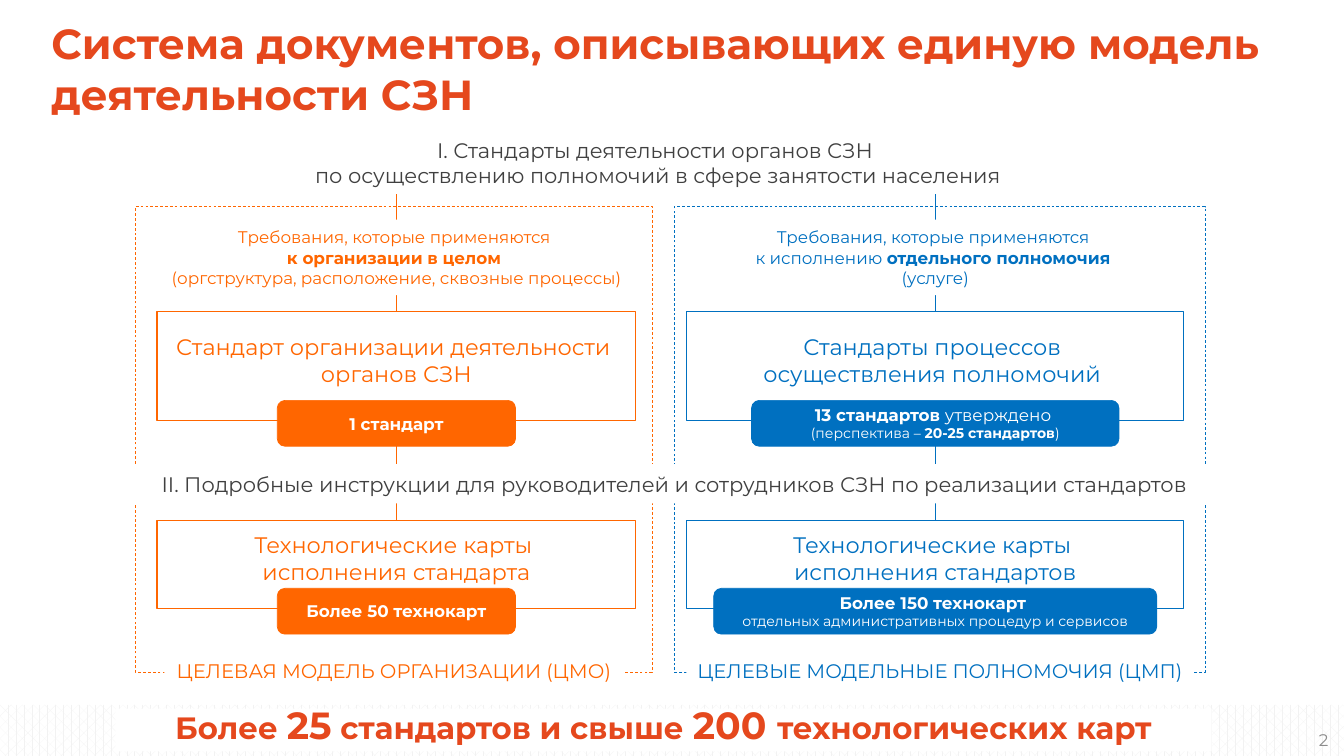
from lxml.etree import SubElement
from pptx import Presentation
from pptx.dml.color import RGBColor
from pptx.enum.dml import MSO_LINE as Dash, MSO_PATTERN as Pat
from pptx.enum.shapes import MSO_CONNECTOR as Conn, MSO_SHAPE as Geo
from pptx.enum.text import MSO_ANCHOR as Anchor, MSO_AUTO_SIZE as Auto, PP_ALIGN as Align
from pptx.oxml.ns import qn
from pptx.util import Cm, Pt

FONT = "Montserrat"
RED = RGBColor(0xE5, 0x48, 0x1D)
ORANGE = RGBColor(0xFF, 0x66, 0x00)
BLUE = RGBColor(0x00, 0x70, 0xC0)
DARK = RGBColor(0x40, 0x40, 0x40)
GREY = RGBColor(0x8C, 0x8C, 0x8C)
PALE = RGBColor(0xF2, 0xF2, 0xF2)
WHITE = RGBColor(0xFF, 0xFF, 0xFF)
WIDE, HIGH = 67.74, 38.1


def write(shape, runs, color, align=Align.CENTER, anchor=Anchor.MIDDLE):
    """Fill a shape with runs of (text, size, bold); a newline breaks the line."""
    frame = shape.text_frame
    frame.word_wrap = True
    frame.vertical_anchor = anchor
    para = frame.paragraphs[0]
    para.alignment = align
    for text, size, bold in runs:
        for i, part in enumerate(text.split("\n")):
            if i:
                para.add_line_break()
            if part:
                run = para.add_run()
                run.text = part
                font = run.font
                font.name, font.size, font.bold = FONT, Pt(size), bold
                font.color.rgb = color


def add_box(slide, box, fill=WHITE, line=None, width=1, geo=Geo.RECTANGLE):
    """Draw a flat shape in a (left, top, width, height) box."""
    shape = slide.shapes.add_shape(geo, *map(Cm, box))
    shape.shadow.inherit = False
    if fill is None:
        shape.fill.background()
    else:
        shape.fill.solid()
        shape.fill.fore_color.rgb = fill
    if line is None:
        shape.line.fill.background()
    else:
        shape.line.color.rgb = line
        shape.line.width = Pt(width)
    return shape


def add_text(slide, box, runs, color, foot=None):
    """Draw a white box with text, raised by an optional foot inset."""
    shape = add_box(slide, box)
    write(shape, runs, color)
    if foot:
        shape.text_frame.margin_top = Cm(0.2)
        shape.text_frame.margin_bottom = Cm(foot)
    return shape


def add_title(slide, box, text):
    """Place and format the title."""
    title = slide.shapes.title
    title.left, title.top, title.width, title.height = map(Cm, box)
    write(title, [(text, 60, True)], RED, Align.LEFT, Anchor.TOP)
    title.text_frame.auto_size = Auto.SHAPE_TO_FIT_TEXT


def add_foot(slide, box, runs, page):
    """Draw the patterned band with its summary and page number."""
    left, top, wide, high = box
    band = add_box(slide, box)
    band.fill.patterned()
    band.fill.pattern = Pat.DIVOT
    band.fill.fore_color.rgb = PALE
    band.fill.back_color.rgb = WHITE
    add_text(slide, (left + 5.82, top + 0.18, 55.25, 2.16), runs, RED, 0.79)
    num = slide.shapes.add_textbox(
        *map(Cm, (left + wide - 15.77 + 0.0, top + 1.12, 15.24, 1.3)))
    write(num, [(page, 24, False)], GREY, Align.RIGHT)


def add_column(slide, box, color, note, cards, label, card_wide, note_wide, label_wide):
    """Draw one model: dashed frame, stem, note, cards with pills, and label."""
    left, top, wide, high = box
    mid = left + 13.15

    def center(span, drop, tall, axis=mid):
        """Give a box of the given width centred on an axis."""
        return axis - span / 2, top + drop, span, tall

    stem = slide.shapes.add_connector(
        Conn.STRAIGHT, Cm(mid), Cm(top - 0.61), Cm(mid), Cm(top + 16.97))
    stem.line.color.rgb = color
    stem.line.width = Pt(1.5)
    SubElement(stem._element.spPr, qn("a:effectLst"))

    for (text, pill, span), drop, tall in zip(cards, (5.28, 15.82), (5.49, 4.42)):
        card = add_text(slide, center(card_wide, drop, tall), [(text, 32, False)],
                        color, 0.79)
        card.line.color.rgb = color
        card.line.width = Pt(1.5)
        badge = add_box(slide, center(span, drop + tall - 1.0, 2.31), color, color,
                        geo=Geo.ROUNDED_RECTANGLE)
        write(badge, pill, WHITE)

    add_text(slide, center(note_wide, 0.66, 3.8), note, color)
    frame = add_box(slide, box, None, color)
    frame.line.dash_style = Dash.DASH
    name = center(label_wide, high - 0.78, 1.4, left + wide / 2)
    add_text(slide, name, [(label, 28, False)], color)


def main():
    """Build and save the slide."""
    deck = Presentation()
    deck.slide_width, deck.slide_height = Cm(WIDE), Cm(HIGH)
    slide = deck.slides.add_slide(deck.slide_layouts[5])
    add_title(slide, (2.34, 0.76, 62.2, 5.38),
              "Система документов, описывающих единую модель деятельности СЗН")
    add_foot(slide, (0, 35.53, WIDE, 2.57), [
        ("Более ", 44, True), ("25", 54, True), (" стандартов и свыше ", 44, True),
        ("200 ", 54, True), ("технологических карт", 44, True)], "2")
    add_column(
        slide, (6.83, 10.41, 26.04, 23.47), ORANGE,
        [("Требования, которые применяются \n", 24, False),
         ("к организации в целом \n", 24, True),
         ("(оргструктура, расположение, сквозные процессы)", 24, False)],
        [("Стандарт организации деятельности \nорганов СЗН",
          [("1 стандарт", 24, True)], 12.01),
         ("Технологические карты \nисполнения стандарта",
          [("Более 50 технокарт", 24, True)], 12.01)],
        "ЦЕЛЕВАЯ МОДЕЛЬ ОРГАНИЗАЦИИ (ЦМО)", 24.13, 23.16, 23.14)
    add_column(
        slide, (33.99, 10.41, 26.75, 23.47), BLUE,
        [("Требования, которые применяются \nк исполнению ", 24, False),
         ("отдельного полномочия \n", 24, True), ("(услуге)", 24, False)],
        [("Стандарты процессов \nосуществления полномочий ",
          [("13 стандартов ", 24, True), ("утверждено \n", 24, False),
           ("(перспектива – ", 20, False), ("20-25 стандартов", 20, True),
           (")", 20, False)], 18.52),
         ("Технологические карты \nисполнения стандартов",
          [("Более 150 технокарт \n", 24, True),
           ("отдельных административных процедур и сервисов", 20, False)], 22.33)],
        "ЦЕЛЕВЫЕ МОДЕЛЬНЫЕ ПОЛНОМОЧИЯ (ЦМП)", 25.04, 25.04, 25.55)
    add_text(slide, (3.78, 6.68, 58.75, 3), [
        ("I. Стандарты деятельности органов СЗН \n"
         "по осуществлению полномочий в сфере занятости населения", 30, False)], DARK)
    add_text(slide, (6.68, 23.39, 54.61, 1.98), [
        ("II. Подробные инструкции для руководителей и сотрудников СЗН "
         "по реализации стандартов", 30, False)], DARK)
    deck.save("out.pptx")


if __name__ == "__main__":
    main()
